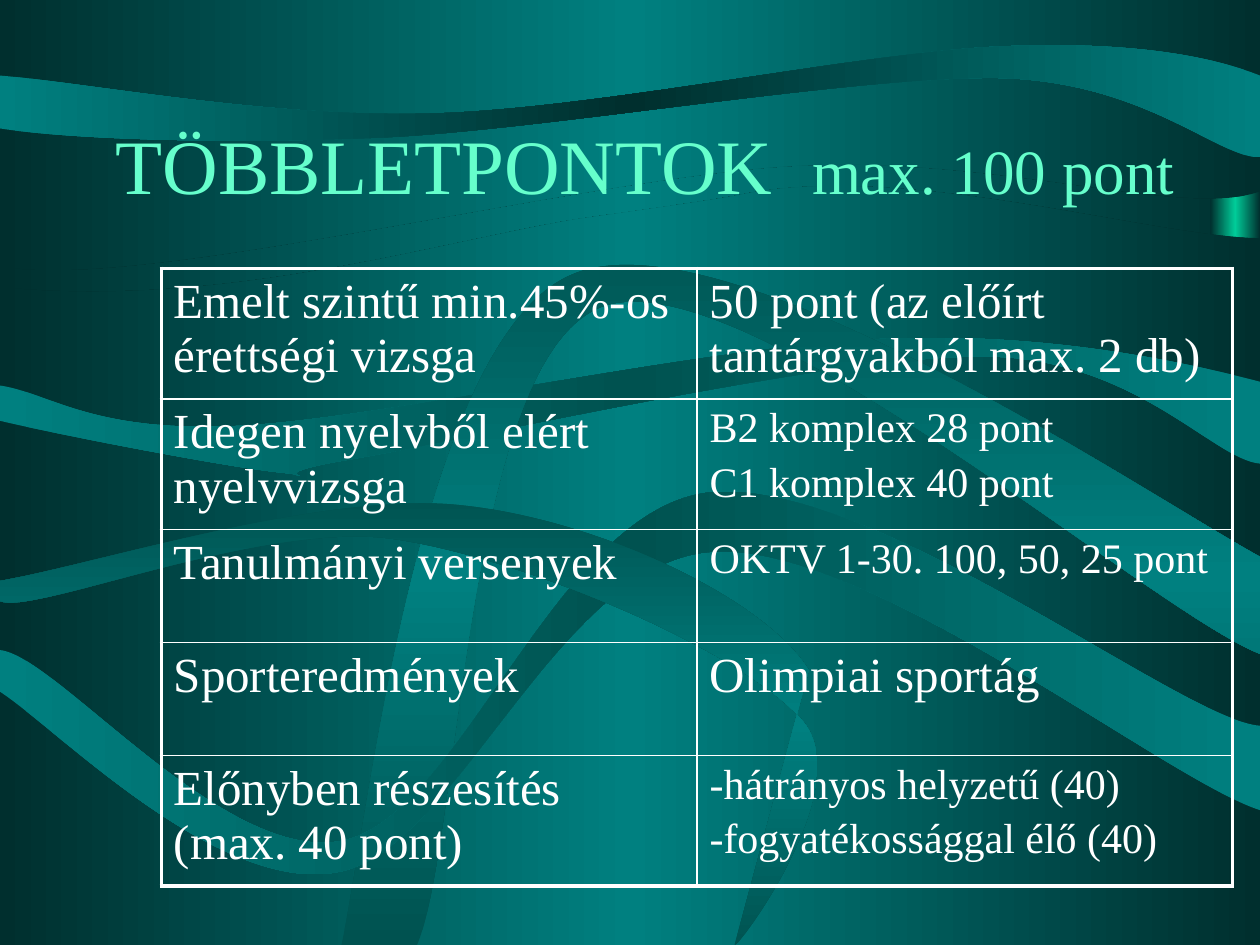
from lxml.etree import SubElement
from pptx import Presentation
from pptx.dml.color import RGBColor
from pptx.enum.shapes import MSO_SHAPE
from pptx.enum.text import MSO_ANCHOR, PP_ALIGN
from pptx.oxml.ns import qn
from pptx.util import Cm, Pt

HUE = {"dark": "002F2E", "mid": "005250", "teal": "008080",
       "mint": "00CC99", "title": "66FFCC", "text": "FFFFFF"}
FONT = "Times New Roman"
GRID = (10, 7.5)

TOP = [(0, 0), (10, 0), (10, 1.52), (9.38, 1.74, 7.92, 1.22, 6.25, 1.32),
       (4.58, 1.42, 1.04, 2.33, 0, 2.11)]
BASE = [(0, 2.28), (1.78, 2.45, 3.4, 1.94, 4.58, 1.74),
        (4.58, 1.74, 5.67, 1.59, 5.86, 1.55),
        (7.15, 1.27, 9.17, 1.89, 10, 1.89), (10, 7.5), (0, 7.5)]
WAVES = [
    ("teal", "dark", 0,
     [(0, 0.6), (0, 1.02), (0.51, 1.1, 1.76, 1.15, 3.08, 1.09),
      (4.4, 1.02, 6.79, 0.6, 7.94, 0.62), (9.09, 0.65, 9.66, 1.25, 10, 1.25),
      (10, 0.6), (9.65, 0.46, 9.01, 0.32, 7.92, 0.37),
      (6.82, 0.42, 4.77, 0.86, 3.45, 0.9), (2.13, 0.94, 0.72, 0.66, 0, 0.6)]),
    ("teal", "mid", 0,
     [(0, 3.06), (0, 3.34), (0.37, 3.43, 1.75, 3.7, 2.22, 3.75),
      (2.69, 3.8, 1.9, 3.79, 2.82, 3.64), (3.75, 3.48, 6.6, 2.82, 7.8, 2.83),
      (9, 2.83, 9.63, 3.65, 10, 3.68), (10, 3.03),
      (9.5, 2.9, 8.36, 2.63, 7.01, 2.69), (5.66, 2.74, 3.07, 3.32, 1.9, 3.38),
      (0.73, 3.44, 0.4, 3.12, 0, 3.06)]),
    ("mid", "teal", 90,
     [(2.71, 7.5), (2.91, 6.61, 3.32, 2.69, 4.54, 2.18),
      (5.75, 1.66, 9.09, 3.92, 10, 4.42), (10, 5.19),
      (9.13, 4.85, 5.91, 2.05, 4.79, 2.43),
      (3.68, 2.82, 3.66, 6.66, 3.31, 7.5)]),
    ("teal", "mid", 0,
     [(0, 5.16), (0, 5.49), (0.45, 5.78, 1.74, 7.11, 2.69, 6.92),
      (3.63, 6.74, 4.43, 4.46, 5.65, 4.38), (6.87, 4.29, 9.27, 6.2, 10, 6.43),
      (10, 5.76), (9.38, 5.72, 6.91, 3.77, 5.62, 3.91),
      (4.41, 4.06, 3.67, 6.46, 2.73, 6.67), (1.79, 6.88, 0.45, 5.2, 0, 5.16)]),
    ("mid", "teal", 90,
     [(0, 4.61), (0, 4.77), (0.26, 4.89, 2.08, 4.12, 3.14, 4.28),
      (4.2, 4.44, 5.92, 5.18, 6.37, 5.72), (6.82, 6.25, 5.82, 7.57, 5.83, 7.5),
      (6.42, 5.32), (6.06, 4.74, 4.73, 4.12, 3.66, 4.01),
      (2.59, 3.89, 0.76, 4.48, 0, 4.61)]),
]
HEAD = [("TÖBBLETPONTOK  ", 44), ("max. 100 pont", 36)]
ROWS = [
    (2.63, "Emelt szintű min.45%-os érettségi vizsga",
     ["50 pont (az előírt tantárgyakból max. 2 db)"], 28, False),
    (2.63, "Idegen nyelvből elért nyelvvizsga",
     ["B2 komplex 28 pont", "C1 komplex 40 pont"], 24, False),
    (2.28, "Tanulmányi versenyek", ["OKTV 1-30. 100, 50, 25 pont"], 24, False),
    (2.28, "Sporteredmények", ["Olimpiai sportág"], 28, False),
    (2.63, "Előnyben részesítés (max. 40 pont)",
     ["hátrányos helyzetű (40)", "fogyatékossággal élő (40)"], 24, True),
]


def blend(fill, node, edge, core, angle=0):
    fill.gradient()
    fill.gradient_angle = angle
    stops = node.find(".//" + qn("a:gsLst"))
    for old in list(stops):
        stops.remove(old)
    for pos, name in ((0, edge), (50000, core), (100000, edge)):
        stop = SubElement(stops, qn("a:gs"), pos=str(pos))
        SubElement(stop, qn("a:srgbClr"), val=HUE[name])


def paint(shape, edge, core, angle=0):
    shape.shadow.inherit = False
    shape.line.fill.background()
    blend(shape.fill, shape._element, edge, core, angle)


def bend(shape, parts):
    lines = iter(shape._element.findall(".//" + qn("a:lnTo")))
    for part in parts[1:]:
        line = next(lines)
        if len(part) == 2:
            continue
        curve = line.makeelement(qn("a:cubicBezTo"), {})
        line.addprevious(curve)
        for piece in (line, next(lines), next(lines)):
            curve.append(piece[0])
            piece.getparent().remove(piece)


def add_wave(slide, box, parts, edge, core, angle=0):
    left, top, width, height = box
    points = [(round(left + part[at] * width / GRID[0]),
               round(top + part[at + 1] * height / GRID[1]))
              for part in parts for at in range(0, len(part), 2)]
    maker = slide.shapes.build_freeform(*points[0], scale=1.0)
    maker.add_line_segments(points[1:], close=True)
    shape = maker.convert_to_shape()
    bend(shape, parts)
    paint(shape, edge, core, angle)


def add_back(slide, box):
    left, top, width, height = box
    blend(slide.background.fill, slide._element, "dark", "teal")
    tab = slide.shapes.add_shape(
        MSO_SHAPE.RECTANGLE, left + width - Cm(1), top + Cm(1.25),
        Cm(1), Cm(8.76))
    paint(tab, "dark", "mint")
    for parts in (TOP, BASE):
        add_wave(slide, box, parts, "dark", "teal")
    for edge, core, angle, parts in WAVES:
        add_wave(slide, box, parts, edge, core, angle)


def add_run(para, text, size, color):
    run = para.add_run()
    run.text = text
    run.font.size = Pt(size)
    run.font.name = FONT
    run.font.color.rgb = RGBColor.from_string(HUE[color])


def add_title(slide, box):
    title = slide.shapes.title
    title.left, title.top, title.width, title.height = box
    slide.shapes._spTree.append(title._element)
    frame = title.text_frame
    frame.word_wrap = True
    frame.vertical_anchor = MSO_ANCHOR.MIDDLE
    para = frame.paragraphs[0]
    para.alignment = PP_ALIGN.CENTER
    for text, size in HEAD:
        add_run(para, text, size, "title")


def edge_cell(cell, sides):
    props = cell._tc.get_or_add_tcPr()
    for at, (side, outer) in enumerate(sides):
        line = props.makeelement(
            qn("a:ln" + side), {"w": str(Pt(2.25 if outer else 1))})
        fill = SubElement(line, qn("a:solidFill"))
        SubElement(fill, qn("a:srgbClr"), val=HUE["text"])
        props.insert(at, line)


def fill_cell(cell, lines, size, dash=False):
    cell.fill.background()
    frame = cell.text_frame
    for at, text in enumerate(lines):
        para = frame.add_paragraph() if at else frame.paragraphs[0]
        props = para._p.get_or_add_pPr()
        space = SubElement(props, qn("a:spcBef"))
        SubElement(space, qn("a:spcPct"), val="20000")
        if dash:
            props.set("marL", "0")
            props.set("indent", "0")
            SubElement(props, qn("a:buFont"), typeface=FONT)
            SubElement(props, qn("a:buChar"), char="-")
        add_run(para, text, size, "text")


def add_grid(slide, box):
    table = slide.shapes.add_table(len(ROWS), 2, *box).table
    table.first_row = table.horz_banding = False
    for col in table.columns:
        col.width = box[2] // 2
    last = len(ROWS) - 1
    for at, (height, label, lines, size, dash) in enumerate(ROWS):
        table.rows[at].height = Cm(height)
        fill_cell(table.cell(at, 0), [label], 28)
        fill_cell(table.cell(at, 1), lines, size, dash)
        for col in (0, 1):
            edge_cell(table.cell(at, col),
                      [("L", col == 0), ("R", col == 1),
                       ("T", at == 0), ("B", at == last)])


def main():
    deck = Presentation()
    deck.slide_width, deck.slide_height = Cm(25.4), Cm(19.05)
    slide = deck.slides.add_slide(deck.slide_layouts[5])
    add_back(slide, (0, 0, deck.slide_width, deck.slide_height))
    add_title(slide, (Cm(1.9), Cm(1.7), Cm(22.2), Cm(3.18)))
    add_grid(slide, (Cm(3.25), Cm(5.41), Cm(21.6), Cm(12.45)))
    deck.save("out.pptx")


if __name__ == "__main__":
    main()
